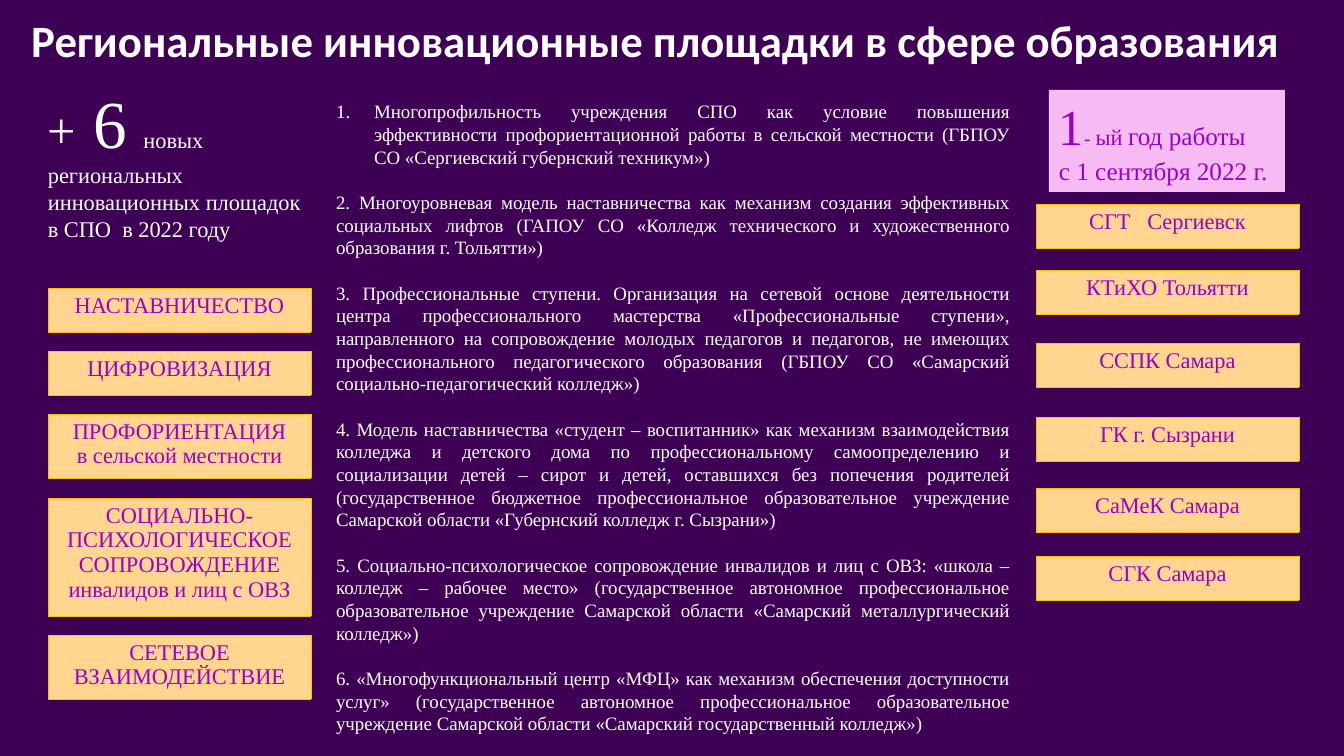
import pptx
import pptx.dml.color
import pptx.enum.shapes
import pptx.enum.text
import pptx.oxml
import pptx.oxml.ns
import pptx.util
from lxml import etree

RGBColor = pptx.dml.color.RGBColor
Align = pptx.enum.text.PP_ALIGN
Anchor = pptx.enum.text.MSO_ANCHOR

BACKGROUND = RGBColor(0x3E, 0x00, 0x54)
WHITE = RGBColor(0xFF, 0xFF, 0xFF)
PURPLE = RGBColor(0x99, 0x00, 0xCC)
PINK = RGBColor(0xF7, 0xBB, 0xF3)
PEACH = RGBColor(0xFF, 0xD5, 0x8F)
GOLD = RGBColor(0xFF, 0xC0, 0x00)
SERIF = "Times New Roman"
SANS = "Calibri"


def px(length):
    return pptx.util.Emu(round(length * 914400 / 100.8))


def write(paragraph, text, *, size, color, font=SERIF, bold=False,
          align=Align.LEFT, line=1.0, after=0):
    """Append one formatted run and set the format of its paragraph."""
    run = paragraph.add_run()
    run.text = text
    run.font.size = pptx.util.Pt(size)
    run.font.name = font
    run.font.bold = bold
    run.font.color.rgb = color
    paragraph.alignment = align
    paragraph.line_spacing = line
    paragraph.space_before = pptx.util.Pt(0)
    paragraph.space_after = pptx.util.Pt(after)


def add_child(parent, tag, **attributes):
    return etree.SubElement(parent, pptx.oxml.ns.qn(tag), attributes)


class RegionalSlide:
    def __init__(self, deck):
        self.slide = deck.slides.add_slide(deck.slide_layouts[1])
        fill = self.slide.background.fill
        fill.solid()
        fill.fore_color.rgb = BACKGROUND

    def place(self, shape, left, top, width, height, anchor=Anchor.TOP):
        shape.left, shape.top = px(left), px(top)
        shape.width, shape.height = px(width), px(height)
        frame = shape.text_frame
        frame.word_wrap = True
        frame.auto_size = pptx.enum.text.MSO_AUTO_SIZE.NONE
        frame.vertical_anchor = anchor
        return frame

    def title(self, text, *box):
        frame = self.place(self.slide.shapes.title, *box, anchor=Anchor.MIDDLE)
        write(frame.paragraphs[0], text, size=32, color=WHITE, font=SANS,
              bold=True, align=Align.CENTER, line=1.07, after=8)

    def projects(self, items, *box):
        frame = self.place(self.slide.placeholders[1], *box)
        for index, item in enumerate(items):
            paragraph = frame.paragraphs[0] if index == 0 else frame.add_paragraph()
            gap = 16.2 if index < len(items) - 1 else 0
            write(paragraph, item, size=13.5, color=WHITE,
                  align=Align.JUSTIFY, after=gap)
            properties = paragraph._p.get_or_add_pPr()
            indent = px(38) if index == 0 else 0
            properties.set("marL", str(indent))
            properties.set("indent", str(-indent))
            # Only the first project is numbered automatically
            if index == 0:
                add_child(properties, "a:buFont", typeface="+mj-lt")
                add_child(properties, "a:buAutoNum", type="arabicPeriod")
            else:
                add_child(properties, "a:buNone")

    def fill_lines(self, frame, lines, color):
        for index, pieces in enumerate(lines):
            paragraph = frame.paragraphs[0] if index == 0 else frame.add_paragraph()
            for text, size in pieces:
                write(paragraph, text, size=size, color=color)

    def note(self, lines, *box):
        shape = self.slide.shapes.add_textbox(0, 0, px(1), px(1))
        self.fill_lines(self.place(shape, *box), lines, WHITE)

    def panel(self, lines, *box):
        shape = self.slide.shapes.add_shape(
            pptx.enum.shapes.MSO_SHAPE.RECTANGLE, 0, 0, px(1), px(1))
        shape.shadow.inherit = False
        shape.fill.solid()
        shape.fill.fore_color.rgb = PINK
        shape.line.fill.background()
        self.fill_lines(self.place(shape, *box), lines, PURPLE)

    def tag(self, lines, left, top, height=44, width=263):
        table = self.slide.shapes.add_table(
            1, 1, px(left), px(top), px(width), px(height)).table
        table.first_row = table.horz_banding = False
        cell = table.cell(0, 0)
        for index, line in enumerate(lines):
            frame = cell.text_frame
            paragraph = frame.paragraphs[0] if index == 0 else frame.add_paragraph()
            write(paragraph, line, size=16, color=PURPLE, align=Align.CENTER)
        # Borders come before the fill in the cell properties
        properties = cell._tc.get_or_add_tcPr()
        for side in ("a:lnL", "a:lnR", "a:lnT", "a:lnB"):
            border = add_child(properties, side, w=str(pptx.util.Pt(0.5)))
            add_child(add_child(border, "a:solidFill"), "a:srgbClr", val=str(GOLD))
        cell.fill.solid()
        cell.fill.fore_color.rgb = PEACH


PROJECTS = [
    "Многопрофильность учреждения СПО как условие повышения эффективности "
    "профориентационной работы в сельской местности (ГБПОУ СО «Сергиевский "
    "губернский техникум»)",
    "2. Многоуровневая модель наставничества как механизм создания эффективных "
    "социальных лифтов (ГАПОУ СО «Колледж технического и художественного "
    "образования г. Тольятти»)",
    "3. Профессиональные ступени. Организация на сетевой основе деятельности "
    "центра профессионального мастерства «Профессиональные ступени», "
    "направленного на сопровождение молодых педагогов и педагогов, не имеющих "
    "профессионального педагогического образования (ГБПОУ СО «Самарский "
    "социально-педагогический колледж»)",
    "4. Модель наставничества «студент – воспитанник» как механизм "
    "взаимодействия колледжа и детского дома по профессиональному "
    "самоопределению и социализации детей – сирот и детей, оставшихся без "
    "попечения родителей (государственное бюджетное профессиональное "
    "образовательное учреждение Самарской области «Губернский колледж "
    "г. Сызрани»)",
    "5. Социально-психологическое сопровождение инвалидов и лиц с ОВЗ: «школа – "
    "колледж – рабочее место» (государственное автономное профессиональное "
    "образовательное учреждение Самарской области «Самарский металлургический "
    "колледж»)",
    "6. «Многофункциональный центр «МФЦ» как механизм обеспечения доступности "
    "услуг» (государственное автономное профессиональное образовательное "
    "учреждение Самарской области «Самарский государственный колледж»)",
]

# Top, height and lines of each direction
DIRECTIONS = [
    (288, 44, ["НАСТАВНИЧЕСТВО"]),
    (351, 44, ["ЦИФРОВИЗАЦИЯ"]),
    (414, 64, ["ПРОФОРИЕНТАЦИЯ", "в сельской местности"]),
    (498, 118, ["СОЦИАЛЬНО-ПСИХОЛОГИЧЕСКОЕ", "СОПРОВОЖДЕНИЕ",
                "инвалидов и лиц с ОВЗ"]),
    (635, 64, ["СЕТЕВОЕ ВЗАИМОДЕЙСТВИЕ"]),
]

COLLEGES = [
    (204, "СГТ   Сергиевск"),
    (270, "КТиХО Тольятти"),
    (343, "ССПК Самара"),
    (417, "ГК г. Сызрани"),
    (488, "СаМеК Самара"),
    (556, "СГК Самара"),
]


def main():
    deck = pptx.Presentation()
    deck.slide_width, deck.slide_height = px(1344), px(756)
    page = RegionalSlide(deck)

    # Heading and the list of projects
    page.title("Региональные инновационные площадки в сфере образования",
               0, 3, 1312, 69)
    page.projects(PROJECTS, 326, 95, 694, 651)

    # Left column: new sites and their directions
    page.note([[("+", 36), (" 6 ", 48), ("новых", 16)],
               [("региональных", 16)],
               [("инновационных площадок", 16)],
               [("в СПО  в 2022 году", 16)]], 38, 76, 282, 173)
    for top, height, lines in DIRECTIONS:
        page.tag(lines, 48, top, height)

    # Right column: year of work and the colleges
    page.panel([[("1", 36), ("- ", 14), ("ый ", 16), ("год работы", 18)],
                [("с 1 сентября 2022 г.", 18)]], 1049, 90, 236, 102)
    for top, college in COLLEGES:
        page.tag([college], 1036, top)

    deck.save("out.pptx")


if __name__ == "__main__":
    main()
